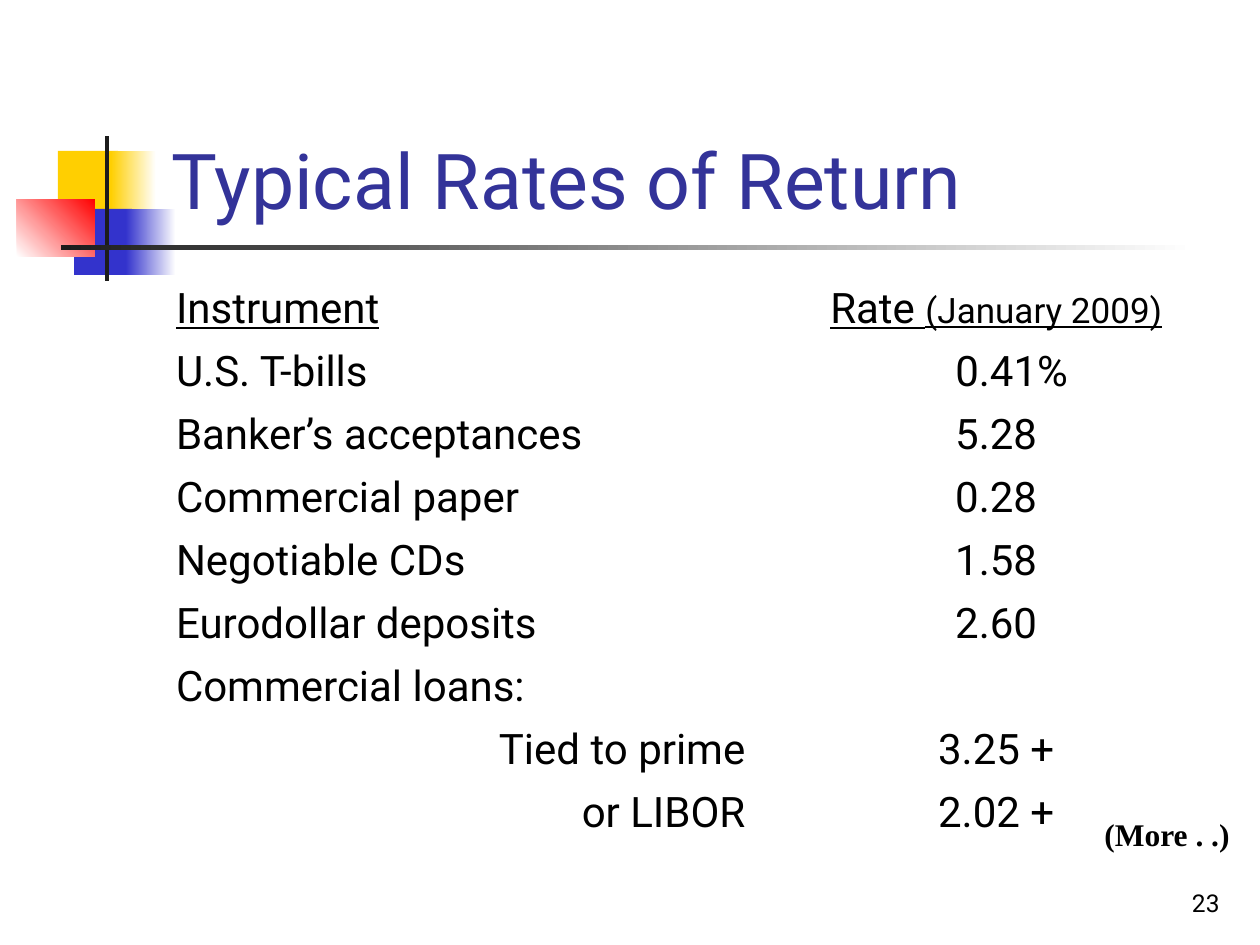
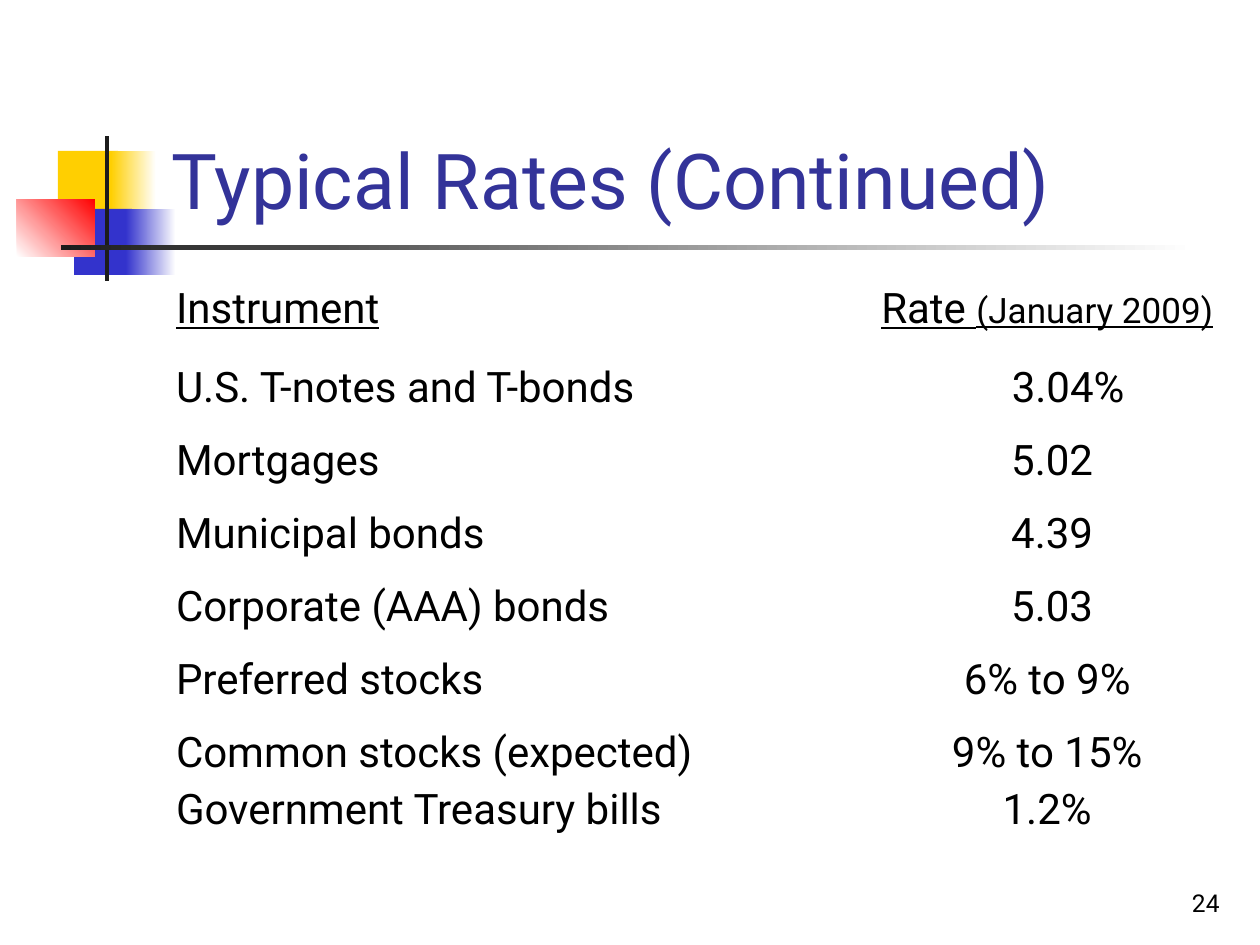
import pptx
import pptx.util
import pptx.dml.color
import pptx.enum.shapes
import pptx.enum.text

RGB = pptx.dml.color.RGBColor
ALIGN = pptx.enum.text.PP_ALIGN
ANCHOR = pptx.enum.text.MSO_ANCHOR

# Colours and fonts
BLACK = RGB(0, 0, 0)
WHITE = RGB(255, 255, 255)
INK = RGB(0x1C, 0x1C, 0x1C)
GOLD = RGB(0xFF, 0xCF, 0x01)
BLUE = RGB(0x33, 0x33, 0xCC)
RED = RGB(0xFF, 0, 0)
NAVY = RGB(0x33, 0x33, 0x99)
SANS = "Roboto"
SERIF = "Times New Roman"

# Table rows: (names, rates, name alignment, shift of the rate in px)
L, R = ALIGN.LEFT, ALIGN.RIGHT
SLIDES = [
    {
        "title": "Typical Rates of Return",
        "page": "23",
        "cols": [595, 476],
        "rows": [63] * 9,
        "body": [
            (["U.S. T-bills"], ["0.41%"], L, 31),
            (["Banker’s acceptances"], ["5.28"], L, 0),
            (["Commercial paper"], ["0.28"], L, 0),
            (["Negotiable CDs"], ["1.58"], L, 0),
            (["Eurodollar deposits"], ["2.60"], L, 0),
            (["Commercial loans:"], [], L, 0),
            (["Tied to prime"], ["3.25 +"], R, 0),
            (["or LIBOR"], ["2.02 +"], R, 0),
        ],
        "more": "(More . .)",
    },
    {
        "title": "Typical Rates (Continued)",
        "page": "24",
        "cols": [697, 374],
        "rows": [79] + [73] * 5 + [120],
        "body": [
            (["U.S. T-notes and T-bonds"], ["3.04%"], L, 42),
            (["Mortgages"], ["5.02"], L, 10),
            (["Municipal bonds"], ["4.39"], L, 10),
            (["Corporate (AAA) bonds"], ["5.03"], L, 10),
            (["Preferred stocks"], ["6% to 9%"], L, 0),
            (["Common stocks (expected)", "Government Treasury bills"],
             ["9% to 15%", "1.2%"], L, 0),
        ],
    },
]

# Corner blocks and rules: box in px, colours, gradient angle
DECOR = [
    ((58, 151, 60, 66), [GOLD], 0),
    ((111, 151, 45, 66), [GOLD, WHITE], 0),
    ((74, 209, 58, 66), [BLUE], 0),
    ((126, 209, 50, 66), [BLUE, WHITE], 0),
    ((17, 199, 78, 58), [WHITE, RED], 45),
    ((105, 136, 4, 145), [INK], 0),
    ((61, 245, 1134, 5), [INK, WHITE], 0),
]


def px(n):
    return round(n * 914400 / 126)


def write(para, text, size, color=BLACK, font=SANS, bold=False, line=False):
    run = para.add_run()
    run.text = text
    run.font.size = pptx.util.Pt(size)
    run.font.name = font
    run.font.color.rgb = color
    run.font.bold = bold
    run.font.underline = line


def label(slide, box, text, size, align=L, anchor=ANCHOR.BOTTOM, **look):
    frame = slide.shapes.add_textbox(*map(px, box)).text_frame
    frame.word_wrap = True
    frame.vertical_anchor = anchor
    para = frame.paragraphs[0]
    para.alignment = align
    write(para, text, size, **look)


def decor(slide):
    for box, colors, angle in DECOR:
        part = slide.shapes.add_shape(
            pptx.enum.shapes.MSO_SHAPE.RECTANGLE, *map(px, box))
        part.shadow.inherit = False
        part.line.fill.background()
        if len(colors) == 1:
            part.fill.solid()
            part.fill.fore_color.rgb = colors[0]
        else:
            part.fill.gradient()
            part.fill.gradient_angle = angle
            for stop, color in zip(part.fill.gradient_stops, colors):
                stop.color.rgb = color


def fill(cell, paras, align, shift=0, line=False):
    """Each paragraph is a list of (text, size) runs."""
    cell.fill.background()
    cell.margin_left = px(13 + shift)
    frame = cell.text_frame
    for i, runs in enumerate(paras):
        para = frame.add_paragraph() if i else frame.paragraphs[0]
        para.alignment = align
        if i:
            para.space_before = pptx.util.Pt(4.8)
        for text, size in runs:
            write(para, text, size, line=line)


def rates(slide, data):
    cols, rows = data["cols"], data["rows"]
    grid = slide.shapes.add_table(
        len(rows), len(cols), px(163), px(278), px(sum(cols)), px(sum(rows))).table
    grid.first_row = grid.horz_banding = False
    for col, width in zip(grid.columns, cols):
        col.width = px(width)
    for row, height in zip(grid.rows, rows):
        row.height = px(height)

    # Heading row
    fill(grid.cell(0, 0), [[("Instrument", 24)]], L, line=True)
    fill(grid.cell(0, 1), [[("Rate ", 24), ("(January 2009)", 20)]],
         ALIGN.CENTER, line=True)

    # Instruments and their rates
    for r, (names, values, align, shift) in enumerate(data["body"], 1):
        fill(grid.cell(r, 0), [[(name, 24)] for name in names], align)
        fill(grid.cell(r, 1), [[(value, 24)] for value in values],
             ALIGN.CENTER, shift)


def main():
    prs = pptx.Presentation()
    prs.slide_width, prs.slide_height = px(1260), px(945)
    for data in SLIDES:
        slide = prs.slides.add_slide(prs.slide_layouts[6])
        decor(slide)
        label(slide, (970, 861, 262, 63), data["page"], 14, R)
        label(slide, (159, 29, 1073, 202), data["title"], 44, color=NAVY)
        rates(slide, data)
        if "more" in data:
            label(slide, (1092, 809, 168, 50), data["more"], 18,
                  anchor=ANCHOR.TOP, font=SERIF, bold=True)
    prs.save("out.pptx")


if __name__ == "__main__":
    main()
